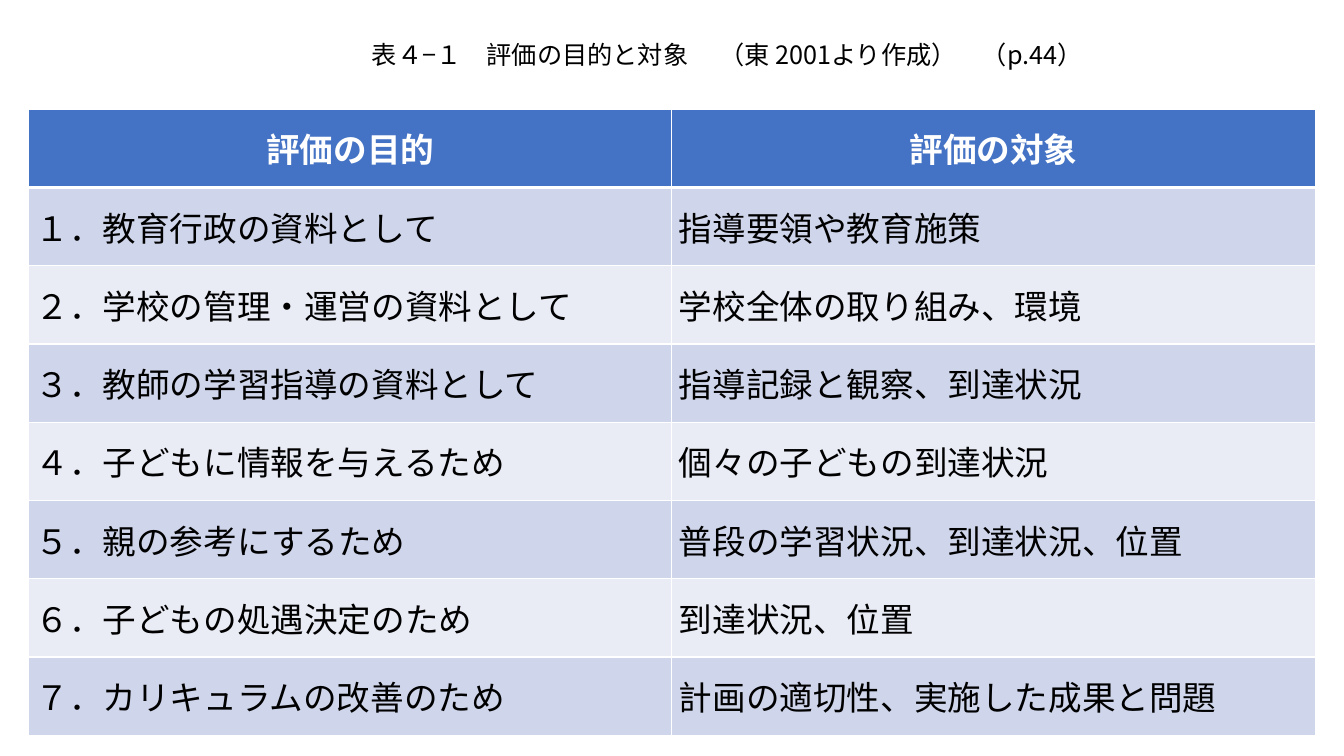
from dataclasses import dataclass
from lxml.etree import SubElement as Sub
from pptx import Presentation
from pptx.dml.color import RGBColor as Rgb
from pptx.enum.text import MSO_ANCHOR as Anchor, MSO_AUTO_SIZE as Auto, PP_ALIGN as Align
from pptx.oxml.ns import qn
from pptx.util import Pt


@dataclass(frozen=True)
class Theme:
    font: str = "Noto Sans CJK JP"
    white: str = "FFFFFF"
    black: str = "000000"
    head: str = "4472C4"
    bands: tuple = ("E9EBF5", "CFD5EA")
    title: int = 18
    cell: int = 24


theme = Theme()


def style(para, size, color, bold=False):
    for run in para.runs:
        font = run.font
        font.name, font.size, font.bold = theme.font, Pt(size), bold
        font.color.rgb = Rgb.from_string(color)
        Sub(font._element, qn("a:ea"), typeface=theme.font)


def border(cell, widths):
    props = cell._tc.get_or_add_tcPr()
    for spot, (side, width) in enumerate(zip("LRTB", widths)):
        line = Sub(props, qn(f"a:ln{side}"), w=str(Pt(width)))
        fill = Sub(line, qn("a:solidFill"))
        Sub(fill, qn("a:srgbClr"), val=theme.white)
        props.insert(spot, line)


rows = [
    ("評価の目的", "評価の対象"),
    ("１．教育行政の資料として", "指導要領や教育施策"),
    ("２．学校の管理・運営の資料として", "学校全体の取り組み、環境"),
    ("３．教師の学習指導の資料として", "指導記録と観察、到達状況"),
    ("４．子どもに情報を与えるため", "個々の子どもの到達状況"),
    ("５．親の参考にするため", "普段の学習状況、到達状況、位置"),
    ("６．子どもの処遇決定のため", "到達状況、位置"),
    ("７．カリキュラムの改善のため", "計画の適切性、実施した成果と問題"),
]

deck = Presentation()
deck.slide_width, deck.slide_height = Pt(960), Pt(540)
slide = deck.slides.add_slide(deck.slide_layouts[5])

high = 55.9
grid = slide.shapes.add_table(
    len(rows), 2, Pt(20.4), Pt(78), Pt(919), Pt(high * len(rows))
).table
for col in grid.columns:
    col.width = Pt(459.5)
for r, texts in enumerate(rows):
    grid.rows[r].height = Pt(high)
    top = r == 0
    for c, text in enumerate(texts):
        cell = grid.cell(r, c)
        cell.text_frame.text = text
        cell.vertical_anchor = Anchor.MIDDLE
        cell.margin_left = cell.margin_right = Pt(5)
        cell.margin_top = cell.margin_bottom = 0
        cell.fill.solid()
        cell.fill.fore_color.rgb = Rgb.from_string(theme.head if top else theme.bands[r % 2])
        border(cell, (1, 1, 3 if r == 1 else 1, 3 if top else 1))
        para = cell.text_frame.paragraphs[0]
        para.alignment = Align.CENTER if top else Align.LEFT
        style(para, theme.cell, theme.white if top else theme.black, top)

title = slide.shapes.title
title.left, title.top, title.width, title.height = Pt(258.5), Pt(24.5), Pt(530), Pt(29)
frame = title.text_frame
frame.text = "表４−１　評価の目的と対象 　（東 2001より作成）　（p.44）"
frame.word_wrap = True
frame.auto_size = Auto.NONE
frame.vertical_anchor = Anchor.TOP
frame.paragraphs[0].alignment = Align.LEFT
style(frame.paragraphs[0], theme.title, theme.black)

deck.save("out.pptx")
